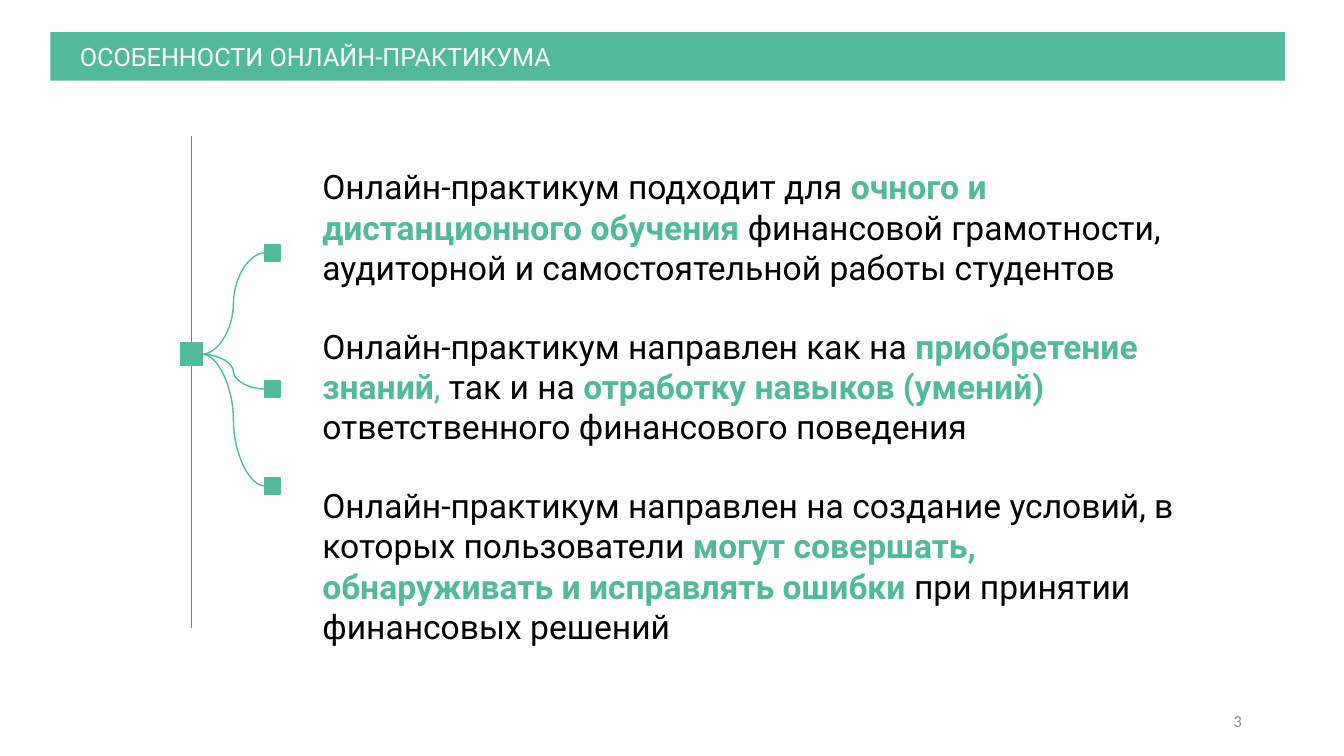
import pptx
import pptx.util
import pptx.dml.color
import pptx.enum.shapes
import pptx.enum.text
import pptx.oxml.ns
import lxml.etree

Pt = pptx.util.Pt
Kind = pptx.enum.shapes.MSO_CONNECTOR
Align = pptx.enum.text.PP_ALIGN
Anchor = pptx.enum.text.MSO_ANCHOR
GREEN, BLACK, WHITE, GRAY = "52BA9A", "000000", "FFFFFF", "808080"

POINTS = [
    (115.2, 94.3, 174.96, [
        ("Онлайн-практикум подходит для ", BLACK, False),
        ("очного и дистанционного обучения ", GREEN, True),
        ("финансовой грамотности, аудиторной и самостоятельной работы студентов",
         BLACK, False),
    ]),
    (228.96, 94.3, 272.16, [
        ("Онлайн-практикум направлен как на ", BLACK, False),
        ("приобретение знаний", GREEN, True),
        (", ", GREEN, False),
        ("так и на ", BLACK, False),
        ("отработку навыков (умений) ", GREEN, True),
        ("ответственного финансового поведения", BLACK, False),
    ]),
    (342.72, 123.8, 341.28, [
        ("Онлайн-практикум направлен на создание условий, в которых пользователи ",
         BLACK, False),
        ("могут совершать, обнаруживать и исправлять ошибки ", GREEN, True),
        ("при принятии финансовых решений", BLACK, False),
    ]),
]


def tint(code):
    return pptx.dml.color.RGBColor.from_string(code)


def paint(shape, code):
    shape.fill.solid()
    shape.fill.fore_color.rgb = tint(code)


def add_run(para, words, code, size, bold=False, font="Roboto"):
    run = para.add_run()
    run.text = words
    run.font.name = font
    run.font.size = Pt(size)
    run.font.bold = bold
    run.font.color.rgb = tint(code)


def add_title(slide, words):
    title = slide.shapes.title
    title.left, title.top = Pt(36), Pt(23)
    title.width, title.height = Pt(882), Pt(34.6)
    paint(title, GREEN)
    frame = title.text_frame
    frame.auto_size = pptx.enum.text.MSO_AUTO_SIZE.NONE
    frame.vertical_anchor = Anchor.MIDDLE
    frame.margin_left = Pt(21)
    para = frame.paragraphs[0]
    para.alignment = Align.LEFT
    add_run(para, words, WHITE, 18)


def add_text(slide, left, top, width, height):
    box = slide.shapes.add_textbox(Pt(left), Pt(top), Pt(width), Pt(height))
    box.text_frame.word_wrap = True
    return box.text_frame


def add_node(slide, left, top, width, height):
    node = slide.shapes.add_shape(
        pptx.enum.shapes.MSO_SHAPE.RECTANGLE,
        Pt(left), Pt(top), Pt(width), Pt(height))
    node.shadow.inherit = False
    paint(node, GREEN)
    node.line.color.rgb = tint(GREEN)
    node.line.width = Pt(1)
    return node


def add_line(slide, kind, code, width, ends=(0, 0, 0, 0)):
    line = slide.shapes.add_connector(kind, *map(Pt, ends))
    line.line.color.rgb = tint(code)
    line.line.width = Pt(width)
    lxml.etree.SubElement(line.element.spPr, pptx.oxml.ns.qn("a:effectLst"))
    return line


def add_point(slide, hub, top, height, mark, runs):
    para = add_text(slide, 223.2, top, 635, height).paragraphs[0]
    for words, code, bold in runs:
        add_run(para, words, code, 24, bold)
    node = add_node(slide, 189, mark, 11, 11.5)
    curve = add_line(slide, Kind.CURVE, GREEN, 1)
    curve.begin_connect(hub, 3)
    curve.end_connect(node, 1)


def add_page(slide, words):
    frame = add_text(slide, 678.2, 500.4, 216, 28.8)
    frame.vertical_anchor = Anchor.MIDDLE
    para = frame.paragraphs[0]
    para.alignment = Align.RIGHT
    add_run(para, words, "8C8C8C", 12, font="Calibri")


def main():
    deck = pptx.Presentation()
    deck.slide_width, deck.slide_height = Pt(960), Pt(540)
    slide = deck.slides.add_slide(deck.slide_layouts.get_by_name("Title Only"))
    add_title(slide, "ОСОБЕННОСТИ ОНЛАЙН-ПРАКТИКУМА")
    add_line(slide, Kind.STRAIGHT, GRAY, 0.5, (137, 448.5, 137, 97.2))
    hub = add_node(slide, 129, 245, 15.5, 16)
    for point in POINTS:
        add_point(slide, hub, *point)
    add_page(slide, "3")
    deck.save("out.pptx")


if __name__ == "__main__":
    main()
